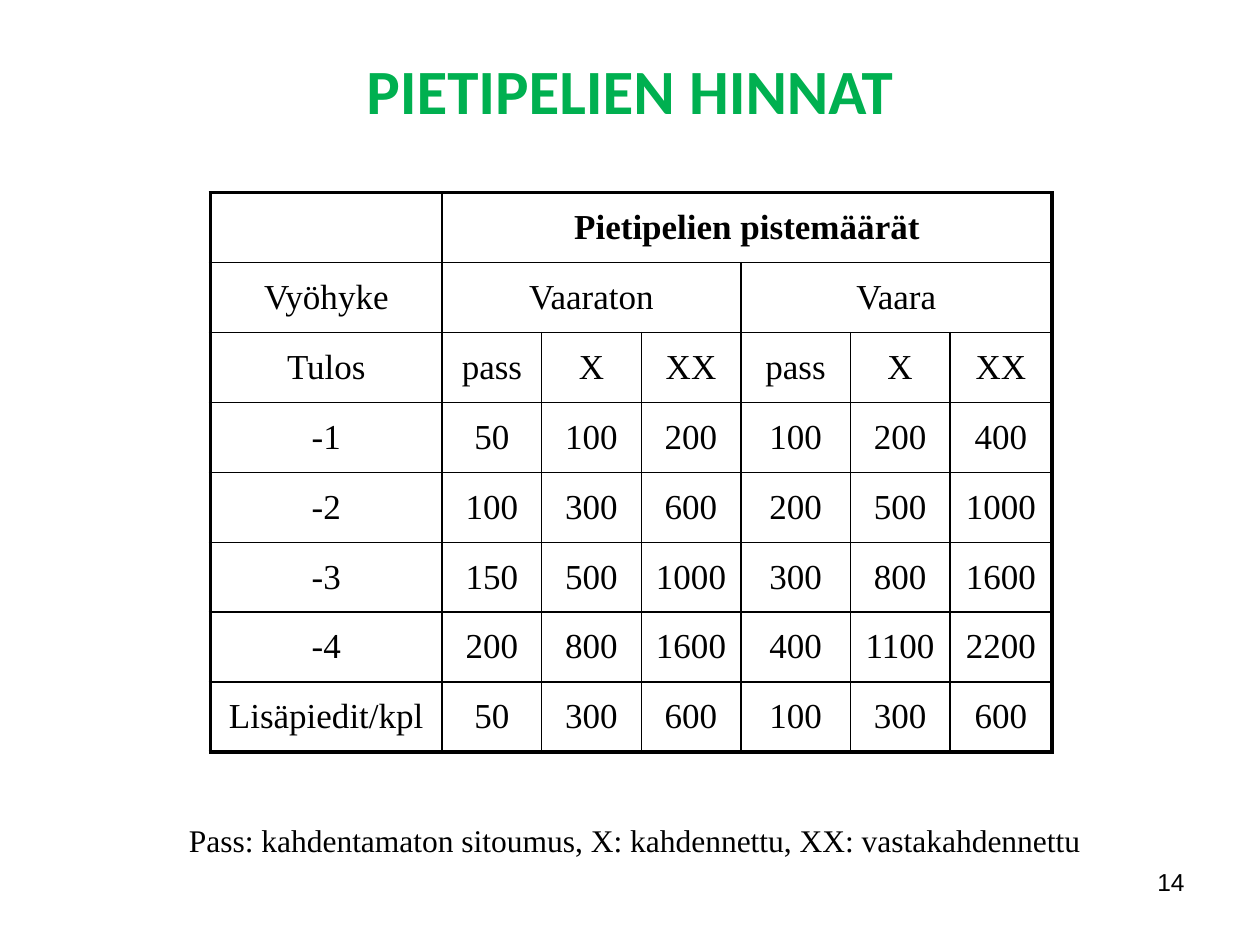
from lxml.etree import SubElement
from pptx import Presentation
from pptx.dml.color import RGBColor
from pptx.enum.shapes import MSO_SHAPE
from pptx.enum.text import MSO_ANCHOR, PP_ALIGN
from pptx.oxml.ns import qn
from pptx.util import Inches, Pt

BLACK, GREEN, WHITE = "000000", "00B050", "FFFFFF"
SERIF = "Times New Roman"
THIN, THICK = 1, 2.25
COLUMN_WIDTHS = [1.84, 0.79, 0.79, 0.79, 0.87, 0.79, 0.81]
ROW_HEIGHT = 0.555
ROWS = [
    ["", "Pietipelien pistemäärät", None, None, None, None, None],
    ["Vyöhyke", "Vaaraton", None, None, "Vaara", None, None],
    ["Tulos", "pass", "X", "XX", "pass", "X", "XX"],
    ["-1", "50", "100", "200", "100", "200", "400"],
    ["-2", "100", "300", "600", "200", "500", "1000"],
    ["-3", "150", "500", "1000", "300", "800", "1600"],
    ["-4", "200", "800", "1600", "400", "1100", "2200"],
    ["Lisäpiedit/kpl", "50", "300", "600", "100", "300", "600"],
]
MERGES = [(0, 1, 6), (1, 1, 3), (1, 4, 6)]


def color(value):
    return RGBColor.from_string(value)


def write(frame, text, size, font_name, hue=BLACK, bold=False, align=PP_ALIGN.CENTER):
    para = frame.paragraphs[0]
    para.text = text
    para.alignment = align
    para.font.size = Pt(size)
    para.font.name = font_name
    para.font.bold = bold
    para.font.color.rgb = color(hue)


def add_title(page, text):
    title = page.shapes.title
    title.left, title.top = Inches(0.75), Inches(0.36)
    title.width, title.height = Inches(8.5), Inches(0.71)
    title.text_frame.vertical_anchor = MSO_ANCHOR.TOP
    write(title.text_frame, text, 36, "Calibri", GREEN, bold=True)


def set_borders(cell, widths):
    properties = cell._tc.get_or_add_tcPr()
    for index, (side, width) in enumerate(widths.items()):
        line = SubElement(properties, qn(f"a:ln{side}"), w=str(Pt(width)))
        fill = SubElement(line, qn("a:solidFill"))
        SubElement(fill, qn("a:srgbClr"), val=BLACK)
        properties.insert(index, line)


def format_cell(cell, row, column, text):
    last_column = column + (cell.span_width if cell.is_merge_origin else 1)
    cell.fill.background()
    cell.vertical_anchor = MSO_ANCHOR.MIDDLE
    set_borders(cell, {
        "L": THICK if column == 0 else THIN,
        "R": THICK if last_column == len(COLUMN_WIDTHS) else THIN,
        "T": THICK if row == 0 else THIN,
        "B": THICK if row == len(ROWS) - 1 else THIN,
    })
    if text is not None:
        write(cell.text_frame, text, 20, SERIF, bold=row == 0)


def add_score_table(page):
    frame = page.shapes.add_table(
        len(ROWS), len(COLUMN_WIDTHS), Inches(1.67), Inches(1.53),
        Inches(sum(COLUMN_WIDTHS)), Inches(ROW_HEIGHT * len(ROWS)))
    table = frame.table
    table.first_row = table.horz_banding = False
    for column, width in zip(table.columns, COLUMN_WIDTHS):
        column.width = Inches(width)
    for row in table.rows:
        row.height = Inches(ROW_HEIGHT)
    for row, first, last in MERGES:
        table.cell(row, first).merge(table.cell(row, last))
    for row, texts in enumerate(ROWS):
        for column, text in enumerate(texts):
            format_cell(table.cell(row, column), row, column, text)


def add_legend(page, text):
    box = page.shapes.add_shape(
        MSO_SHAPE.RECTANGLE, Inches(0.59), Inches(6.35), Inches(8.9), Inches(0.63))
    box.shadow.inherit = False
    box.fill.solid()
    box.fill.fore_color.rgb = color(WHITE)
    box.line.fill.background()
    box.text_frame.word_wrap = False
    box.text_frame.vertical_anchor = MSO_ANCHOR.MIDDLE
    write(box.text_frame, text, 18, SERIF)


def add_page_number(page, text):
    box = page.shapes.add_textbox(Inches(7.17), Inches(6.83), Inches(2.33), Inches(0.52))
    box.text_frame.word_wrap = True
    write(box.text_frame, text, 14, "Arial", align=PP_ALIGN.RIGHT)


def main():
    deck = Presentation()
    deck.slide_width, deck.slide_height = Inches(10), Inches(7.5)
    page = deck.slides.add_slide(deck.slide_layouts[5])
    add_title(page, "PIETIPELIEN HINNAT")
    add_score_table(page)
    add_legend(page, "Pass: kahdentamaton sitoumus, X: kahdennettu, XX: vastakahdennettu")
    add_page_number(page, "14")
    deck.save("out.pptx")


if __name__ == "__main__":
    main()
